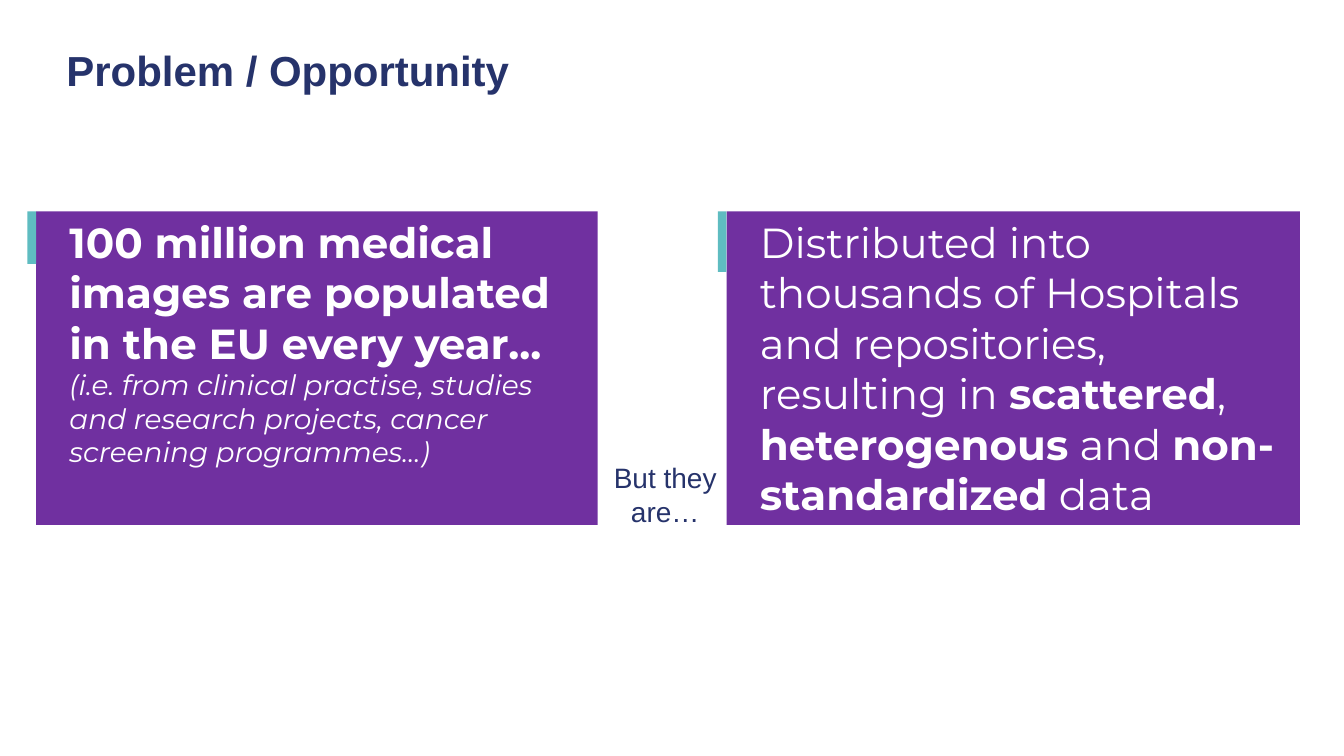
import pptx
import pptx.dml.color
import pptx.enum.shapes
import pptx.enum.text
import pptx.util
from pptx.util import Cm

NAVY = pptx.dml.color.RGBColor(0x26, 0x33, 0x6B)
PURPLE = pptx.dml.color.RGBColor(0x70, 0x30, 0xA0)
TEAL = pptx.dml.color.RGBColor(0x5F, 0xBC, 0xC1)
WHITE = pptx.dml.color.RGBColor(0xFF, 0xFF, 0xFF)

LARGE, SMALL = 30, 20
CARD_TOP, CARD_HEIGHT = 5.33, 7.9


class SlideBuilder:
    """Holds the slide and its style; lengths are in centimetres."""

    heading_font = "Arial"
    card_font = "Montserrat"

    def __init__(self, slide):
        self.slide = slide

    def run(self, paragraph, text, size, font, color, bold=False, italic=False):
        run = paragraph.add_run()
        run.text = text
        run.font.size = pptx.util.Pt(size)
        run.font.name = font
        run.font.color.rgb = color
        run.font.bold = bold
        run.font.italic = italic

    def title(self, text, left, top, width, height):
        heading = self.slide.shapes.title
        heading.left, heading.top = Cm(left), Cm(top)
        heading.width, heading.height = Cm(width), Cm(height)
        frame = heading.text_frame
        frame.vertical_anchor = pptx.enum.text.MSO_ANCHOR.MIDDLE
        paragraph = frame.paragraphs[0]
        paragraph.alignment = pptx.enum.text.PP_ALIGN.LEFT
        paragraph.line_spacing = 0.9
        self.run(paragraph, text, LARGE, self.heading_font, NAVY, bold=True)

    def block(self, left, top, width, height, color):
        block = self.slide.shapes.add_shape(
            pptx.enum.shapes.MSO_SHAPE.RECTANGLE,
            Cm(left), Cm(top), Cm(width), Cm(height))
        block.shadow.inherit = False
        block.fill.solid()
        block.fill.fore_color.rgb = color
        block.line.fill.background()

    def text_frame(self, left, top, width, height):
        box = self.slide.shapes.add_textbox(
            Cm(left), Cm(top), Cm(width), Cm(height))
        box.text_frame.word_wrap = True
        return box.text_frame

    def card(self, left, width, accent_height, text_height, paragraphs):
        """Panel with a side accent; each run is (text, size, bold, italic)."""
        self.block(left, CARD_TOP, width, CARD_HEIGHT, PURPLE)
        self.block(left - 0.22, CARD_TOP, 0.22, accent_height, TEAL)
        frame = self.text_frame(left + 0.59, CARD_TOP, width - 0.39, text_height)
        for index, runs in enumerate(paragraphs):
            paragraph = frame.add_paragraph() if index else frame.paragraphs[0]
            for text, size, bold, italic in runs:
                self.run(paragraph, text, size, self.card_font, WHITE, bold, italic)

    def bridge(self, text, left, top, width, height):
        paragraph = self.text_frame(left, top, width, height).paragraphs[0]
        paragraph.alignment = pptx.enum.text.PP_ALIGN.CENTER
        properties = paragraph._p.get_or_add_pPr()
        properties.set("marL", str(Cm(0.3)))
        properties.set("indent", "0")
        self.run(paragraph, text, SMALL, self.heading_font, NAVY)


def main():
    deck = pptx.Presentation()
    deck.slide_width, deck.slide_height = Cm(33.87), Cm(19.05)
    builder = SlideBuilder(deck.slides.add_slide(deck.slide_layouts[5]))

    builder.title("Problem / Opportunity", 1.42, 0, 23.37, 3.68)

    # Opportunity: the images available
    builder.card(0.91, 14.15, 1.32, 6.68, [
        [("100 million medical images are populated in the EU every year...",
          LARGE, True, False)],
        [("(i.e. from clinical practise, studies and research projects, "
          "cancer screening programmes…)", SMALL, False, True)],
    ])

    # Link between the two cards
    builder.bridge("But they are…", 14.53, 11.48, 4.17, 1.96)

    # Problem: the state of the data
    builder.card(18.31, 14.45, 1.52, 7.95, [[
        ("Distributed into thousands of Hospitals and repositories, "
         "resulting in ", LARGE, False, False),
        ("scattered", LARGE, True, False),
        (", ", LARGE, False, False),
        ("heterogenous", LARGE, True, False),
        (" and ", LARGE, False, False),
        ("non-standardized", LARGE, True, False),
        (" data", LARGE, False, False),
    ]])

    deck.save("out.pptx")


if __name__ == "__main__":
    main()
